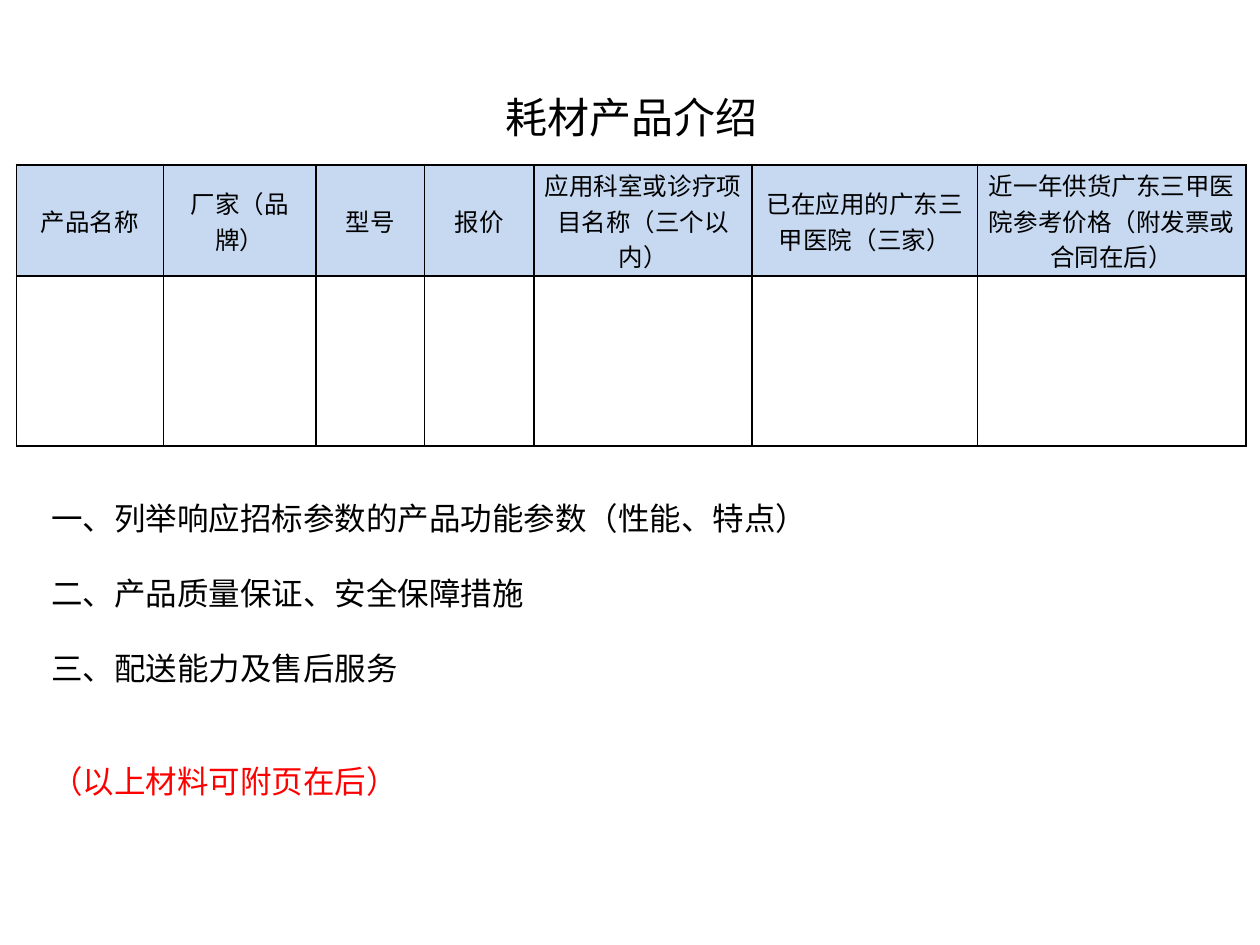
from lxml import etree
from pptx import Presentation
from pptx.dml.color import RGBColor
from pptx.enum.text import MSO_ANCHOR, MSO_AUTO_SIZE, PP_ALIGN
from pptx.oxml.ns import qn
from pptx.util import Inches, Pt

CENTER, LEFT = PP_ALIGN.CENTER, PP_ALIGN.LEFT
MIDDLE = MSO_ANCHOR.MIDDLE
GROW = MSO_AUTO_SIZE.SHAPE_TO_FIT_TEXT

BLACK = RGBColor(0x00, 0x00, 0x00)
RED = RGBColor(0xFF, 0x00, 0x00)
HEADER_BLUE = RGBColor(0xC6, 0xD9, 0xF1)
CJK_FONT = "Noto Sans CJK SC"

SLIDE_W, SLIDE_H = Inches(10), Inches(7.5)
HEADERS = {  # heading: column width in inches
    "产品名称": 1.17,
    "厂家（品牌）": 1.21,
    "型号": 0.86,
    "报价": 0.87,
    "应用科室或诊疗项目名称（三个以内）": 1.73,
    "已在应用的广东三甲医院（三家）": 1.79,
    "近一年供货广东三甲医院参考价格（附发票或合同在后）": 2.13,
}
ROW_HEIGHTS = [0.88, 1.35]
REQUIREMENTS = [
    "一、列举响应招标参数的产品功能参数（性能、特点）",
    "二、产品质量保证、安全保障措施",
    "三、配送能力及售后服务",
]
CLOSING_NOTE = "（以上材料可附页在后）"
ITEM_GAP, NOTE_GAP = 21.5, 42.5


def write(paragraph, text, font, size, color=BLACK, align=LEFT, before=0):
    paragraph.alignment = align
    paragraph.space_before = Pt(before)
    run = paragraph.add_run()
    run.text = text
    run.font.name = font
    run.font.size = Pt(size)
    run.font.color.rgb = color
    if font == CJK_FONT:
        east_asian = etree.SubElement(run._r.get_or_add_rPr(), qn("a:ea"))
        east_asian.set("typeface", font)


def add_text_frame(slide, left, top, width, height):
    """Add a growing text box placed by shares of the slide's size."""
    box = slide.shapes.add_textbox(
        round(left * SLIDE_W), round(top * SLIDE_H),
        round(width * SLIDE_W), round(height * SLIDE_H))
    frame = box.text_frame
    frame.word_wrap = True
    frame.auto_size = GROW
    return frame


def add_borders(cell):
    properties = cell._tc.get_or_add_tcPr()
    for side in ("a:lnL", "a:lnR", "a:lnT", "a:lnB"):
        line = etree.SubElement(properties, qn(side), w=str(Pt(1)))
        fill = etree.SubElement(line, qn("a:solidFill"))
        etree.SubElement(fill, qn("a:srgbClr"), val=str(BLACK))


def add_product_table(slide):
    widths = list(HEADERS.values())
    table = slide.shapes.add_table(
        len(ROW_HEIGHTS), len(widths), Inches(0.13), Inches(1.31),
        Inches(sum(widths)), Inches(sum(ROW_HEIGHTS))).table
    table.first_row = table.horz_banding = False
    for column, width in zip(table.columns, widths):
        column.width = Inches(width)
    for row, height in zip(table.rows, ROW_HEIGHTS):
        row.height = Inches(height)
    for cell in table.iter_cells():
        add_borders(cell)
        cell.fill.background()
    for cell, heading in zip(table.rows[0].cells, HEADERS):
        cell.fill.solid()
        cell.fill.fore_color.rgb = HEADER_BLUE
        cell.vertical_anchor = MIDDLE
        cell.margin_left = cell.margin_right = Inches(0.07)
        cell.margin_top = cell.margin_bottom = 0
        write(cell.text_frame.paragraphs[0], heading, CJK_FONT, 14, align=CENTER)


def add_title(slide):
    frame = add_text_frame(slide, 0.117, 0.09, 0.769, 0.067)
    write(frame.paragraphs[0], "耗材产品介绍", "Arial", 24, align=CENTER)


def add_requirements(slide):
    frame = add_text_frame(slide, 0.031, 0.521, 0.95, 0.336)
    for index, requirement in enumerate(REQUIREMENTS):
        paragraph = frame.add_paragraph() if index else frame.paragraphs[0]
        write(paragraph, requirement, "Calibri", 18,
              before=ITEM_GAP if index else 0)
    write(frame.add_paragraph(), CLOSING_NOTE, "Calibri", 18,
          color=RED, before=NOTE_GAP)


def main():
    presentation = Presentation()
    presentation.slide_width, presentation.slide_height = SLIDE_W, SLIDE_H
    slide = presentation.slides.add_slide(presentation.slide_layouts[6])
    add_product_table(slide)
    add_title(slide)
    add_requirements(slide)
    presentation.save("out.pptx")


if __name__ == "__main__":
    main()
